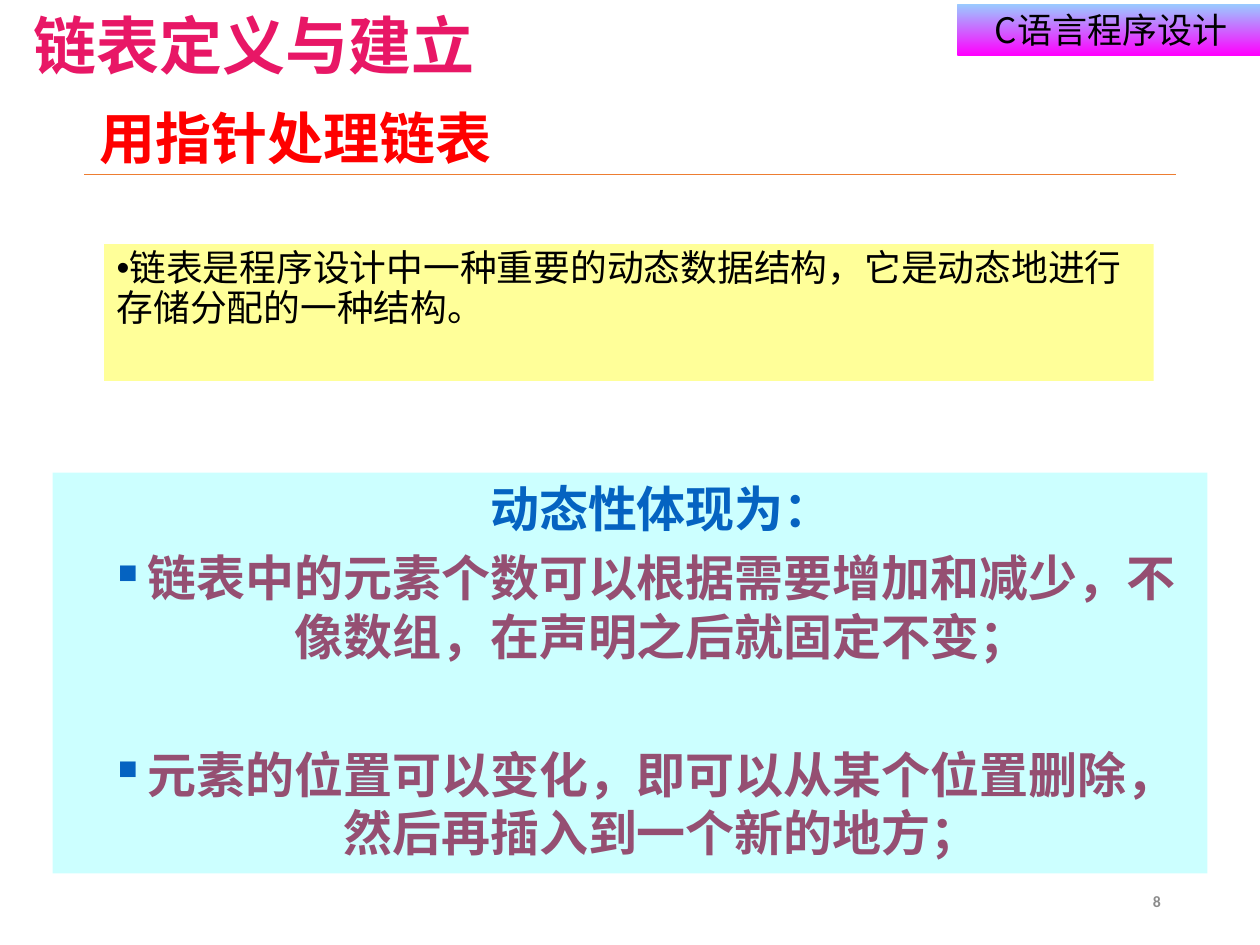
from dataclasses import dataclass

from lxml.etree import SubElement
from pptx import Presentation
from pptx.dml.color import RGBColor
from pptx.enum.shapes import MSO_CONNECTOR, MSO_SHAPE
from pptx.enum.text import MSO_ANCHOR, MSO_AUTO_SIZE, PP_ALIGN
from pptx.oxml.ns import qn
from pptx.slide import Slide
from pptx.util import Cm, Pt

BLACK = RGBColor(0x00, 0x00, 0x00)
RED = RGBColor(0xFF, 0x00, 0x00)
CRIMSON = RGBColor(0xE8, 0x17, 0x66)
ORANGE = RGBColor(0xED, 0x7D, 0x31)
GREY = RGBColor(0x8C, 0x8C, 0x8C)
SKY = RGBColor(0x99, 0xCC, 0xFF)
MAGENTA = RGBColor(0xFF, 0x00, 0xFF)
YELLOW = RGBColor(0xFF, 0xFF, 0x99)
CYAN = RGBColor(0xCC, 0xFF, 0xFF)
BLUE = RGBColor(0x05, 0x63, 0xC1)
PLUM = RGBColor(0x95, 0x4F, 0x72)


def add_bullet(paragraph, char, font, color=None, percent=None):
    properties = paragraph._p.get_or_add_pPr()
    if color is not None:
        bullet_color = SubElement(properties, qn("a:buClr"))
        SubElement(bullet_color, qn("a:srgbClr"), val=str(color))
    if percent:
        SubElement(properties, qn("a:buSzPct"), val=str(percent * 1000))
    SubElement(properties, qn("a:buFont"), typeface=font)
    SubElement(properties, qn("a:buChar"), char=char)


def write(paragraph, text, size, color, font="Calibri", bold=False,
          align=PP_ALIGN.LEFT, spacing=None, before=None, margin=None, hanging=0, bullet=None):
    if bullet:
        add_bullet(paragraph, **bullet)
    if margin is not None:
        paragraph.level = 1
        properties = paragraph._p.get_or_add_pPr()
        properties.set("marL", str(margin))
        properties.set("indent", str(-hanging))
    paragraph.alignment = align
    paragraph.line_spacing = spacing
    paragraph.space_before = before
    run = paragraph.add_run()
    run.text = text
    run.font.size = Pt(size)
    run.font.bold = bold
    run.font.color.rgb = color
    run.font.name = font
    run._r.get_or_add_rPr().set("lang", "zh-CN")
    SubElement(run._r.get_or_add_rPr(), qn("a:ea"), typeface=font)


@dataclass
class Lecture:
    slide: Slide
    accent_font: str = "Noto Sans CJK SC"
    heading_font: str = "Noto Sans CJK JP"

    def title(self, text, left, top, width, height):
        title = self.slide.shapes.title
        title.left, title.top, title.width, title.height = map(Cm, (left, top, width, height))
        title.text_frame.auto_size = MSO_AUTO_SIZE.NONE
        title.text_frame.vertical_anchor = MSO_ANCHOR.MIDDLE
        write(title.text_frame.paragraphs[0], text, 32, RED, bold=True, spacing=0.9)

    def label(self, left, top, width, height, anchor=MSO_ANCHOR.TOP, side=0.25):
        frame = self.slide.shapes.add_textbox(*map(Cm, (left, top, width, height))).text_frame
        frame.word_wrap = True
        frame.margin_left = frame.margin_right = Cm(side)
        frame.vertical_anchor = anchor
        return frame.paragraphs[0]

    def panel(self, left, top, width, height, *colors, anchor=MSO_ANCHOR.TOP):
        panel = self.slide.shapes.add_shape(
            MSO_SHAPE.RECTANGLE, *map(Cm, (left, top, width, height)))
        panel.shadow.inherit = False
        panel.line.fill.background()
        if len(colors) == 1:
            panel.fill.solid()
            panel.fill.fore_color.rgb = colors[0]
        else:
            panel.fill.gradient()
            panel.fill.gradient_angle = 270
            for position, (stop, color) in enumerate(zip(panel.fill.gradient_stops, colors)):
                stop.position = position
                stop.color.rgb = color
        panel.text_frame.word_wrap = True
        panel.text_frame.vertical_anchor = anchor
        return panel.text_frame

    def rule(self, left, right, top):
        rule = self.slide.shapes.add_connector(
            MSO_CONNECTOR.STRAIGHT, Cm(left), Cm(top), Cm(right), Cm(top))
        rule.line.color.rgb = ORANGE
        rule.line.width = Pt(0.25)
        SubElement(rule._element.spPr, qn("a:effectLst"))
        rule._element.remove(rule._element.find(qn("p:style")))


def main():
    deck = Presentation()
    deck.slide_width, deck.slide_height = Cm(25.4), Cm(19.05)
    lecture = Lecture(deck.slides.add_slide(deck.slide_layouts[5]))

    course = lecture.panel(19.3, 0.08, 6.2, 1.04, SKY, MAGENTA, anchor=MSO_ANCHOR.MIDDLE)
    write(course.paragraphs[0], "C语言程序设计", 20, BLACK, lecture.accent_font,
          align=PP_ALIGN.CENTER)
    chapter = lecture.label(0.48, 0, 9.3, 1.04, side=0)
    write(chapter, "链表定义与建立", 36, CRIMSON, lecture.heading_font, bold=True,
          align=PP_ALIGN.CENTER)
    lecture.rule(1.7, 23.71, 3.52)
    lecture.title("用指针处理链表", 1.75, 1, 21.9, 3.68)
    page = lecture.label(17.93, 17.65, 5.72, 1.02, anchor=MSO_ANCHOR.MIDDLE)
    write(page, "8", 9, GREY, bold=True, align=PP_ALIGN.RIGHT)

    definition = lecture.panel(2.1, 4.92, 21.16, 2.76, YELLOW)
    write(definition.paragraphs[0],
          "链表是程序设计中一种重要的动态数据结构，它是动态地进行存储分配的一种结构。",
          21, BLACK, spacing=0.9, bullet={"char": "•", "font": "Arial"})

    dynamics = lecture.panel(1.06, 9.53, 23.28, 8.08, CYAN)
    style = {"size": 28, "font": lecture.accent_font, "bold": True,
             "align": PP_ALIGN.CENTER, "margin": Cm(1.27)}
    write(dynamics.paragraphs[0], "动态性体现为：", color=BLUE, **style)
    features = [
        ("链表中的元素个数可以根据需要增加和减少，不像数组，在声明之后就固定不变；", 5.6),
        ("元素的位置可以变化，即可以从某个位置删除，然后再插入到一个新的地方；", 45),
    ]
    square = {"char": "n", "font": "Wingdings", "color": BLUE, "percent": 55}
    for feature, gap in features:
        write(dynamics.add_paragraph(), feature, color=PLUM, before=Pt(gap),
              hanging=Cm(0.6), bullet=square, **style)

    deck.save("out.pptx")


if __name__ == "__main__":
    main()
